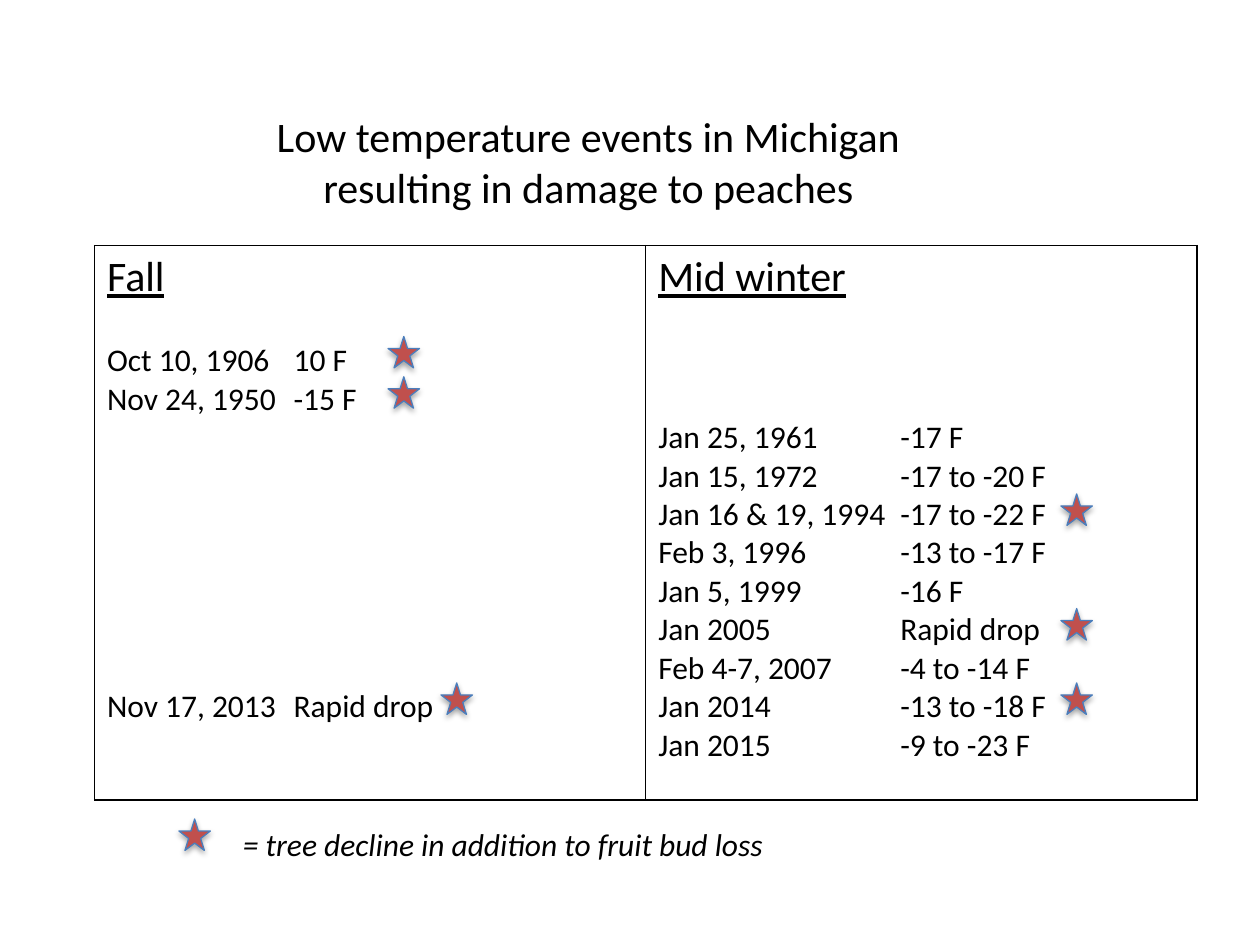
from dataclasses import dataclass

from lxml.etree import SubElement
from pptx import Presentation
from pptx.dml.color import RGBColor
from pptx.enum.shapes import MSO_SHAPE as Shape
from pptx.enum.text import MSO_ANCHOR as Anchor, PP_ALIGN as Align
from pptx.oxml.ns import qn
from pptx.util import Inches, Pt


@dataclass(frozen=True)
class Theme:
    """Colours, font and type sizes of the slide."""
    font: str = "Calibri"
    ink: RGBColor = RGBColor(0, 0, 0)
    star: RGBColor = RGBColor(0xC0, 0x50, 0x4D)
    star_line: RGBColor = RGBColor(0x4B, 0x7E, 0xBC)
    heading: int = 24
    body: int = 18
    line_pitch: float = 21.97


class SlideBuilder:
    """Places styled elements on the current slide."""

    def __init__(self, page, theme):
        self.page = page
        self.theme = theme

    def style(self, para, size, underline=False, italic=False):
        for span in para.runs:
            font = span.font
            font.name, font.size = self.theme.font, Pt(size)
            font.color.rgb = self.theme.ink
            font.underline, font.italic = underline, italic

    def title(self, text, left, top, width, height):
        box = self.page.shapes.title
        box.left, box.top = Inches(left), Inches(top)
        box.width, box.height = Inches(width), Inches(height)
        frame = box.text_frame
        frame.text = text
        frame.word_wrap, frame.vertical_anchor = True, Anchor.TOP
        frame.paragraphs[0].alignment = Align.CENTER
        self.style(frame.paragraphs[0], self.theme.heading)

    def note(self, text, left, top, width, height):
        box = self.page.shapes.add_textbox(
            Inches(left), Inches(top), Inches(width), Inches(height))
        box.text_frame.word_wrap = True
        box.text_frame.text = text
        self.style(box.text_frame.paragraphs[0], self.theme.body, italic=True)

    def star(self, left, top, size=0.25):
        star = self.page.shapes.add_shape(
            Shape.STAR_5_POINT, Inches(left), Inches(top), Inches(size), Inches(size))
        star.fill.solid()
        star.fill.fore_color.rgb = self.theme.star
        star.line.color.rgb = self.theme.star_line
        star.line.width = Pt(0.75)

    def table(self, columns, left, top, width, height):
        table = self.page.shapes.add_table(
            1, len(columns), Inches(left), Inches(top), Inches(width), Inches(height)).table
        table.first_row = table.horz_banding = False
        for cell, column in zip(table.rows[0].cells, columns):
            self.border(cell)
            cell.fill.background()
            self.events(cell.text_frame, *column)

    def border(self, cell):
        properties = cell._tc.get_or_add_tcPr()
        for side in ("a:lnL", "a:lnR", "a:lnT", "a:lnB"):
            line = SubElement(properties, qn(side), w=str(Pt(1)))
            fill = SubElement(line, qn("a:solidFill"))
            SubElement(fill, qn("a:srgbClr"), val=str(self.theme.ink))

    def events(self, frame, heading, tab_stop, rows):
        frame.text = heading
        self.style(frame.paragraphs[0], self.theme.heading, underline=True)
        for skipped_lines, date, reading in rows:
            para = frame.add_paragraph()
            para.text = f"{date}\t{reading}"
            tabs = SubElement(para._p.get_or_add_pPr(), qn("a:tabLst"))
            SubElement(tabs, qn("a:tab"), pos=str(Inches(tab_stop)), algn="l")
            if skipped_lines:
                para.space_before = Pt(skipped_lines * self.theme.line_pitch)
            self.style(para, self.theme.body)


FALL = [
    (1, "Oct 10, 1906", "10 F"),
    (0, "Nov 24, 1950", "-15 F"),
    (7, "Nov 17, 2013", "Rapid drop"),
]
MID_WINTER = [
    (3, "Jan 25, 1961", "-17 F"),
    (0, "Jan 15, 1972", "-17 to -20 F"),
    (0, "Jan 16 & 19, 1994", "-17 to -22 F"),
    (0, "Feb 3, 1996", "-13 to -17 F"),
    (0, "Jan 5, 1999", "-16 F"),
    (0, "Jan 2005", "Rapid drop"),
    (0, "Feb 4-7, 2007", "-4 to -14 F"),
    (0, "Jan 2014", "-13 to -18 F"),
    (0, "Jan 2015", "-9 to -23 F"),
]
STARS = [(3.08, 2.67), (3.08, 2.99), (3.5, 5.42),
         (8.42, 3.92), (8.42, 4.83), (8.42, 5.42), (1.42, 6.5)]


def main():
    deck = Presentation()
    deck.slide_width, deck.slide_height = Inches(10), Inches(7.5)
    page = deck.slides.add_slide(deck.slide_layouts[5])
    builder = SlideBuilder(page, Theme())
    builder.title("Low temperature events in Michigan resulting in damage to peaches",
                  1.67, 0.83, 6, 0.91)
    builder.table([("Fall", 1.48, FALL), ("Mid winter", 1.92, MID_WINTER)],
                  0.75, 1.95, 8.75, 4.4)
    for left, top in STARS:
        builder.star(left, top)
    builder.note("= tree decline in addition to fruit bud loss", 1.83, 6.5, 4.83, 0.4)
    deck.save("out.pptx")


if __name__ == "__main__":
    main()
